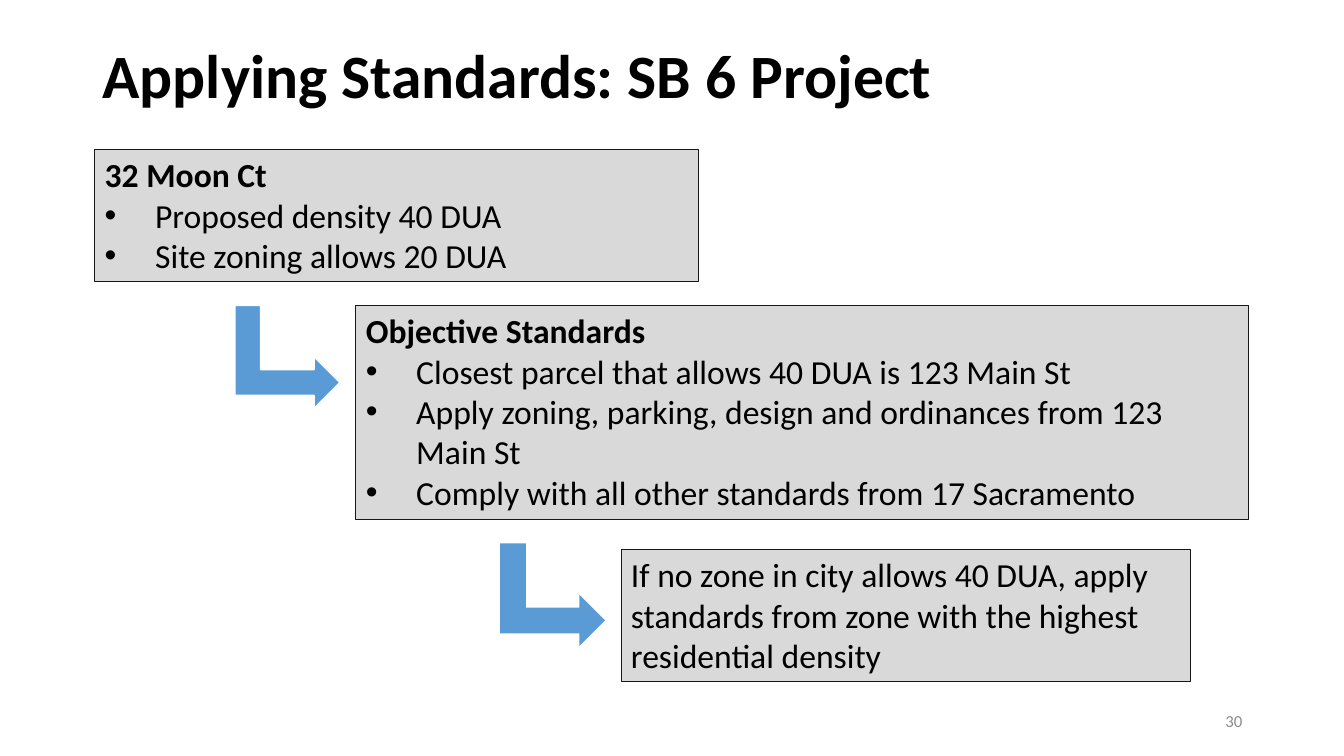
from lxml import etree
from pptx import Presentation
from pptx.dml.color import RGBColor
from pptx.enum.shapes import MSO_SHAPE
from pptx.enum.text import MSO_ANCHOR, PP_ALIGN
from pptx.oxml.ns import qn
from pptx.util import Inches, Pt

RECTANGLE = MSO_SHAPE.RECTANGLE
BENT_ARROW = MSO_SHAPE.BENT_UP_ARROW
TOP, MIDDLE = MSO_ANCHOR.TOP, MSO_ANCHOR.MIDDLE
LEFT, RIGHT = PP_ALIGN.LEFT, PP_ALIGN.RIGHT

FONT = "Calibri"
COLORS = {
    "text": "000000",
    "box": "D9D9D9",
    "border": "181717",
    "arrow": "5B9BD5",
    "arrow_edge": "FFFFFF",
    "number": "8C8C8C",
}
ARROW_SIZE = (1.02, 1.04)

# Each step: box, heading, bullets, plain text
STEPS = [
    ((0.94, 1.48, 5.99, 1.31), "32 Moon Ct",
     ["Proposed density 40 DUA", "Site zoning allows 20 DUA"], None),
    ((3.53, 3.03, 8.85, 2.12), "Objective Standards",
     ["Closest parcel that allows 40 DUA is 123 Main St",
      "Apply zoning, parking, design and ordinances from 123 Main St",
      "Comply with all other standards from 17 Sacramento"], None),
    ((6.16, 5.45, 5.65, 1.31), None, [],
     "If no zone in city allows 40 DUA, apply standards from zone "
     "with the highest residential density"),
]
ARROW_TOPS = [3.02, 5.38]
ARROW_OFFSET = 1.19  # from the arrow's left to the box it points at


def rgb(name):
    return RGBColor.from_string(COLORS[name])


def add_bullet(paragraph):
    properties = paragraph._p.get_or_add_pPr()
    properties.set("marL", str(Inches(0.5)))
    properties.set("indent", str(Inches(-0.5)))
    etree.SubElement(properties, qn("a:buFont")).set("typeface", "Arial")
    etree.SubElement(properties, qn("a:buChar")).set("char", "•")


def write(frame, text, size=24, bold=False, color="text", align=LEFT,
          spacing=None, bullet=False):
    """Fill the first empty paragraph, or add one after the others."""
    first = frame.paragraphs[0]
    paragraph = frame.add_paragraph() if first.runs else first
    paragraph.alignment = align
    if spacing:
        paragraph.line_spacing = spacing
    if bullet:
        add_bullet(paragraph)
    run = paragraph.add_run()
    run.text = text
    run.font.name = FONT
    run.font.size = Pt(size)
    run.font.bold = bold
    run.font.color.rgb = rgb(color)


def add_label(slide, box, text, anchor, **text_format):
    frame = slide.shapes.add_textbox(*map(Inches, box)).text_frame
    frame.word_wrap = True
    frame.vertical_anchor = anchor
    write(frame, text, **text_format)


def add_filled_shape(slide, kind, box, fill):
    shape = slide.shapes.add_shape(kind, *map(Inches, box))
    shape.shadow.inherit = False
    shape.fill.solid()
    shape.fill.fore_color.rgb = rgb(fill)
    return shape


def add_step(slide, box, heading, bullets, plain):
    shape = add_filled_shape(slide, RECTANGLE, box, "box")
    shape.line.color.rgb = rgb("border")
    shape.line.width = Pt(0.75)
    frame = shape.text_frame
    frame.word_wrap = True
    frame.vertical_anchor = TOP
    if heading:
        write(frame, heading, bold=True)
    for bullet in bullets:
        write(frame, bullet, bullet=True)
    if plain:
        write(frame, plain)


def add_arrow(slide, target_box, top, edged):
    box = (target_box[0] - ARROW_OFFSET, top, *ARROW_SIZE)
    arrow = add_filled_shape(slide, BENT_ARROW, box, "arrow")
    arrow.rotation = 90
    if edged:
        arrow.line.color.rgb = rgb("arrow_edge")
        arrow.line.width = Pt(1)
    else:
        arrow.line.fill.background()


def build_slide(presentation):
    slide = presentation.slides.add_slide(presentation.slide_layouts[6])

    # Title
    add_label(slide, (0.92, 0.4, 11.5, 1.45), "Applying Standards: SB 6 Project",
              TOP, size=44, bold=True, spacing=0.9)

    # Staircase of boxes, each later one led to by an arrow
    for index, step in enumerate(STEPS):
        if index:
            add_arrow(slide, step[0], ARROW_TOPS[index - 1], edged=index == 1)
        add_step(slide, *step)

    # Slide number
    add_label(slide, (9.42, 6.95, 3, 0.4), "30", MIDDLE,
              size=12, color="number", align=RIGHT)


def main():
    presentation = Presentation()
    presentation.slide_width = Inches(13.33)
    presentation.slide_height = Inches(7.5)
    build_slide(presentation)
    presentation.save("out.pptx")


if __name__ == "__main__":
    main()
